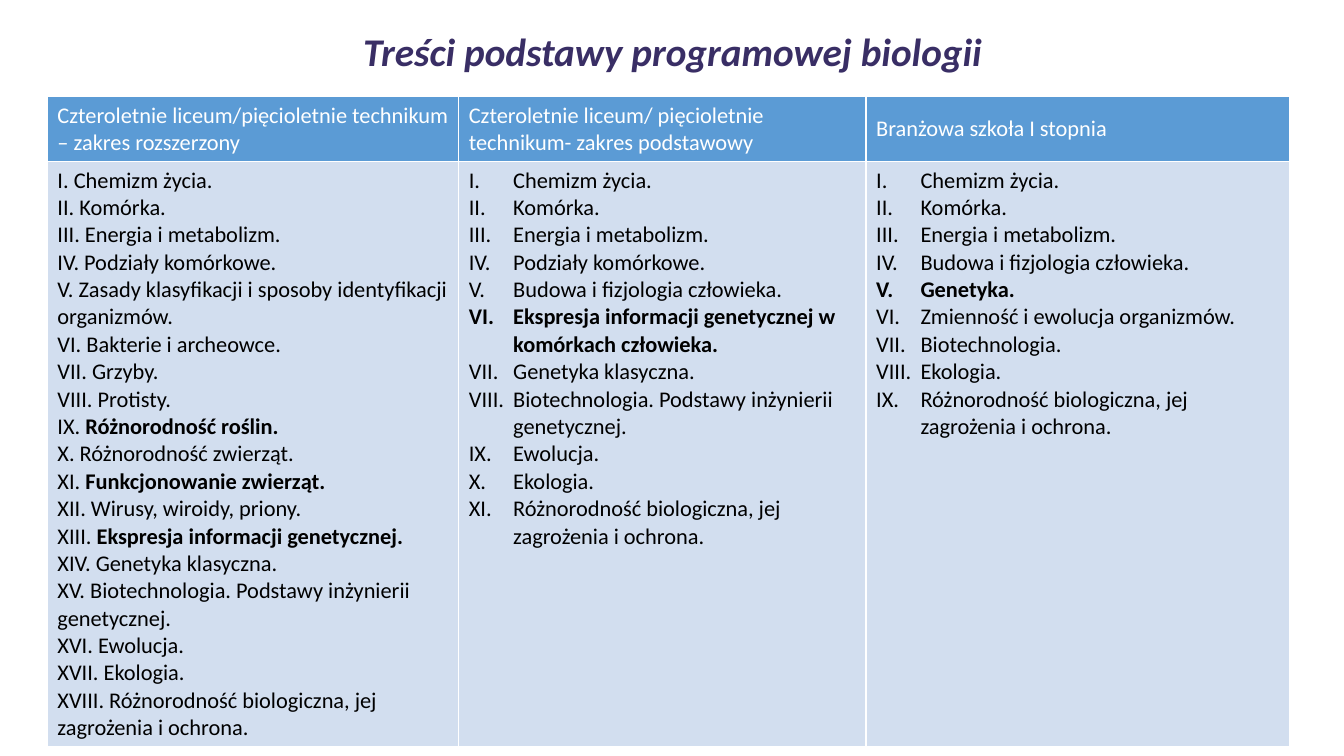
"""Build the slide comparing the biology curriculum across three school types."""
from lxml.etree import SubElement
from pptx import Presentation
from pptx.dml.color import RGBColor
from pptx.enum.text import MSO_ANCHOR, PP_ALIGN
from pptx.oxml.ns import qn
from pptx.util import Pt

PX = 9144
FONT = "Calibri"
COLORS = {"title": "392E65", "header": "5B9BD5", "body": "D2DEEF",
          "white": "FFFFFF", "black": "000000"}

TITLE = "Treści podstawy programowej biologii"
HEADERS = [
    "Czteroletnie liceum/pięcioletnie technikum – zakres rozszerzony",
    "Czteroletnie liceum/ pięcioletnie technikum- zakres podstawowy",
    "Branżowa szkoła I stopnia",
]
EXTENDED = [
    "I. Chemizm życia.",
    "II. Komórka.",
    "III. Energia i metabolizm.",
    "IV. Podziały komórkowe.",
    "V. Zasady klasyfikacji i sposoby identyfikacji organizmów.",
    "VI. Bakterie i archeowce.",
    "VII. Grzyby.",
    "VIII. Protisty.",
    "IX. Różnorodność roślin.",
    "X. Różnorodność zwierząt.",
    "XI. Funkcjonowanie zwierząt.",
    "XII. Wirusy, wiroidy, priony.",
    "XIII. Ekspresja informacji genetycznej.",
    "XIV. Genetyka klasyczna.",
    "XV. Biotechnologia. Podstawy inżynierii genetycznej.",
    "XVI. Ewolucja.",
    "XVII. Ekologia.",
    "XVIII. Różnorodność biologiczna, jej zagrożenia i ochrona.",
]
BASIC = [
    "Chemizm życia.",
    "Komórka.",
    "Energia i metabolizm.",
    "Podziały komórkowe.",
    "Budowa i fizjologia człowieka.",
    "Ekspresja informacji genetycznej w komórkach człowieka.",
    "Genetyka klasyczna.",
    "Biotechnologia. Podstawy inżynierii genetycznej.",
    "Ewolucja.",
    "Ekologia.",
    "Różnorodność biologiczna, jej zagrożenia i ochrona.",
]
VOCATIONAL = [
    "Chemizm życia.",
    "Komórka.",
    "Energia i metabolizm.",
    "Budowa i fizjologia człowieka.",
    "Genetyka.",
    "Zmienność i ewolucja organizmów.",
    "Biotechnologia.",
    "Ekologia.",
    "Różnorodność biologiczna, jej zagrożenia i ochrona.",
]
BOLD_TOPICS = {
    "Różnorodność roślin.",
    "Funkcjonowanie zwierząt.",
    "Ekspresja informacji genetycznej.",
    "Ekspresja informacji genetycznej w komórkach człowieka.",
    "Genetyka.",
}
TITLE_BOX = (92, 12, 1150, 76)
TABLE_LEFT, TABLE_TOP = 47, 96
COLUMN_WIDTHS = [408, 404, 420]
ROW_HEIGHTS = [64, 580]
NUMBER_INDENT = 44


def style_font(font, size, color):
    font.name = FONT
    font.size = Pt(size)
    font.color.rgb = RGBColor.from_string(COLORS[color])


def style_cell(cell, fill):
    properties = cell._tc.get_or_add_tcPr()
    for side in ("lnL", "lnR", "lnT", "lnB"):
        line = SubElement(properties, qn(f"a:{side}"), w=str(Pt(1)))
        solid = SubElement(line, qn("a:solidFill"))
        SubElement(solid, qn("a:srgbClr"), val=COLORS["white"])
    cell.fill.solid()
    cell.fill.fore_color.rgb = RGBColor.from_string(COLORS[fill])


def number_paragraph(paragraph):
    properties = paragraph._p.get_or_add_pPr()
    properties.set("marL", str(NUMBER_INDENT * PX))
    properties.set("indent", str(-NUMBER_INDENT * PX))
    SubElement(properties, qn("a:buFont"), typeface="+mj-lt")
    SubElement(properties, qn("a:buAutoNum"), type="romanUcPeriod")


def add_topic(paragraph, topic, numbered):
    if numbered:
        number_paragraph(paragraph)
        parts = [topic]
    else:
        numeral, name = topic.split(" ", 1)
        parts = [f"{numeral} ", name] if name in BOLD_TOPICS else [topic]
    for part in parts:
        run = paragraph.add_run()
        run.text = part
        run.font.bold = part in BOLD_TOPICS
    style_font(paragraph.font, 16, "black")


def add_title(slide):
    title = slide.shapes.title
    title.left, title.top, title.width, title.height = (n * PX for n in TITLE_BOX)
    title.text_frame.text = TITLE
    title.text_frame.vertical_anchor = MSO_ANCHOR.MIDDLE
    paragraph = title.text_frame.paragraphs[0]
    paragraph.alignment = PP_ALIGN.CENTER
    style_font(paragraph.font, 28, "title")
    paragraph.font.bold = paragraph.font.italic = True


def add_curriculum_table(slide):
    table = slide.shapes.add_table(
        len(ROW_HEIGHTS), len(COLUMN_WIDTHS), TABLE_LEFT * PX, TABLE_TOP * PX,
        sum(COLUMN_WIDTHS) * PX, sum(ROW_HEIGHTS) * PX).table
    table.horz_banding = False
    table.first_row = False
    for row, height in zip(table.rows, ROW_HEIGHTS):
        row.height = height * PX
    for index, topics in enumerate((EXTENDED, BASIC, VOCATIONAL)):
        table.columns[index].width = COLUMN_WIDTHS[index] * PX
        header, body = table.cell(0, index), table.cell(1, index)
        style_cell(header, "header")
        style_cell(body, "body")
        header.text = HEADERS[index]
        header.vertical_anchor = MSO_ANCHOR.MIDDLE
        style_font(header.text_frame.paragraphs[0].font, 16, "white")
        frame = body.text_frame
        for position, topic in enumerate(topics):
            paragraph = frame.add_paragraph() if position else frame.paragraphs[0]
            add_topic(paragraph, topic, numbered=index > 0)


def main():
    presentation = Presentation()
    presentation.slide_width, presentation.slide_height = 1333 * PX, 750 * PX
    slide = presentation.slides.add_slide(presentation.slide_layouts[5])
    add_title(slide)
    add_curriculum_table(slide)
    presentation.save("out.pptx")


if __name__ == "__main__":
    main()
